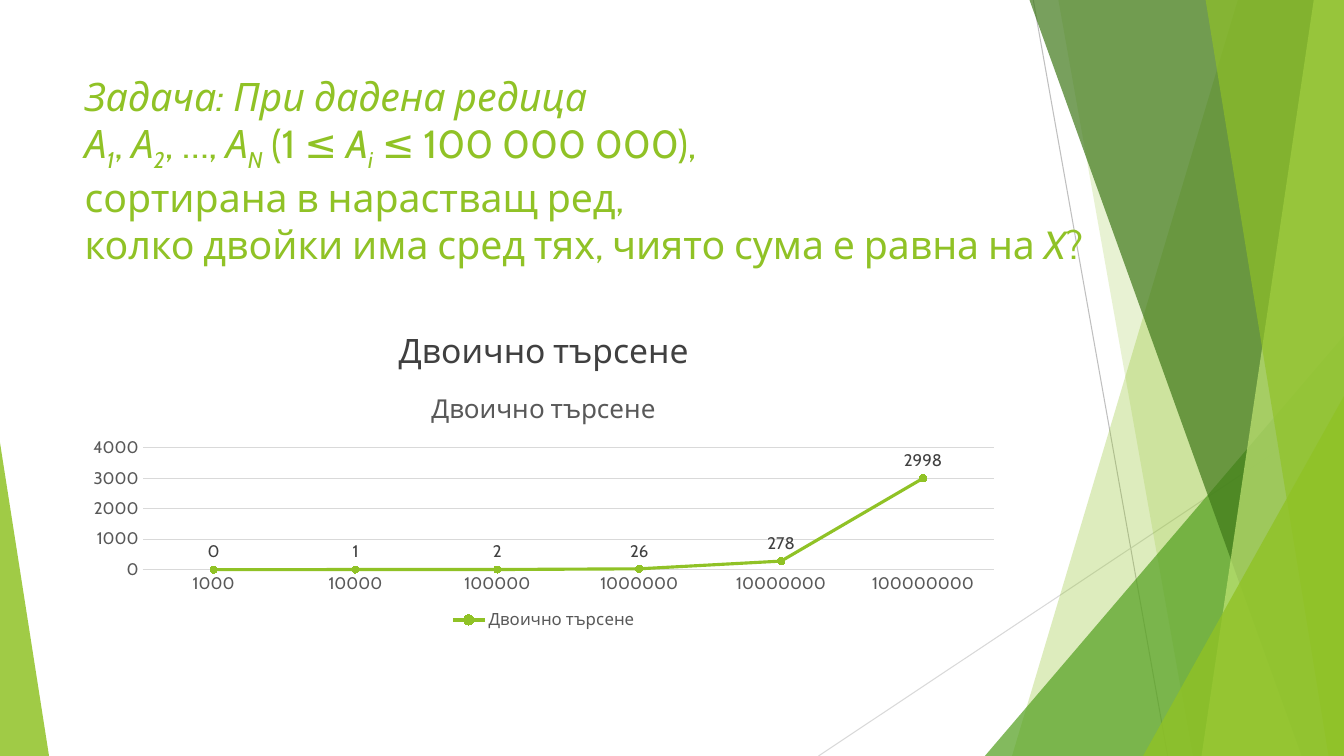
from lxml import etree
from pptx import Presentation
from pptx import util as u
from pptx.chart import data as chart_data
from pptx.dml import color
from pptx.enum import chart as charts, shapes, text
from pptx.oxml import ns

COLORS = {
    "lime": "90C226", "green": "54A021", "forest": "3F7819", "pale": "C0E474",
    "ink": "404040", "grey": "595959", "rule": "BFBFBF", "grid": "D9D9D9",
}
METHOD = "Двоично търсене"
TIMES = {"1000": 0, "10000": 1, "100000": 2, "1000000": 26, "10000000": 278, "100000000": 2998}

# Title lines as (text, style) spans: i = italic, s = italic subscript
TASK = [
    [("Задача: При дадена редица ", "i")],
    [("А", "i"), ("1", "s"), (",", ""), (" А", "i"), ("2", "s"), (", …, ", ""), ("А", "i"),
     ("N", "s"), (" (1 ≤ ", ""), ("A", "i"), ("i", "s"), (" ≤ 100 000 000), ", "")],
    [("сортирана в нарастващ ред, ", "")],
    [("колко двойки има сред тях, чиято сума е равна на ", ""), ("X", "i"), ("?", "")],
]


class Page:
    """Draws on one slide; all lengths are percent of its width or height."""

    def __init__(self, deck, font="Cabin"):
        self.width, self.height, self.font = deck.slide_width, deck.slide_height, font
        self.slide = deck.slides.add_slide(deck.slide_layouts[5])
        self.shapes = self.slide.shapes

    def spot(self, x, y):
        return round(self.width * x / 100), round(self.height * y / 100)

    def area(self, x, y, w, h):
        return self.spot(x, y) + self.spot(w, h)

    def rgb(self, name):
        return color.RGBColor.from_string(COLORS[name])

    def style(self, font, size, tint, **extra):
        values = {"name": self.font, "size": u.Pt(size), "bold": False, **extra}
        for key, value in values.items():
            setattr(font, key, value)
        font.color.rgb = self.rgb(tint)

    def stroke(self, line, tint, width):
        line.color.rgb = self.rgb(tint)
        line.width = u.Pt(width)

    def paint(self, shape, tint, opacity):
        shape.shadow.inherit = False
        shape.fill.solid()
        shape.fill.fore_color.rgb = self.rgb(tint)
        shape.line.fill.background()
        fill = shape.element.spPr.find(".//" + ns.qn("a:srgbClr"))
        etree.SubElement(fill, ns.qn("a:alpha")).set("val", str(opacity * 1000))

    def line(self, start, end, tint):
        rule = self.shapes.add_connector(
            shapes.MSO_CONNECTOR.STRAIGHT, *self.spot(*start), *self.spot(*end))
        self.stroke(rule.line, tint, 0.75)
        etree.SubElement(rule.element.spPr, ns.qn("a:effectLst"))

    def band(self, top, bottom, tint, opacity):
        """Slanted band reaching from a top and a bottom point to the right edge."""
        outline = self.shapes.build_freeform(*self.spot(top, 0))
        corners = [(100, 0), (100, 100), (bottom, 100)]
        outline.add_line_segments([self.spot(*corner) for corner in corners])
        self.paint(outline.convert_to_shape(), tint, opacity)

    def wedge(self, left, top, width, apex, tint, opacity):
        """Triangle standing on the bottom edge."""
        shape = self.shapes.add_shape(shapes.MSO_SHAPE.ISOSCELES_TRIANGLE,
                                      *self.area(left, top, width, 100 - top))
        shape.adjustments[0] = apex
        self.paint(shape, tint, opacity)

    def place(self, shape, area):
        for key, value in zip(("left", "top", "width", "height"), self.area(*area)):
            setattr(shape, key, value)

    def frame(self, box, anchor):
        values = {"word_wrap": True, "auto_size": text.MSO_AUTO_SIZE.NONE,
                  "vertical_anchor": anchor}
        for key, value in values.items():
            setattr(box.text_frame, key, value)
        return box.text_frame.paragraphs[0]

    def title(self, area, lines, size):
        box = self.shapes.title
        self.place(box, area)
        box.element.getparent().append(box.element)  # in front of the bands
        para = self.frame(box, text.MSO_ANCHOR.TOP)
        para.alignment = text.PP_ALIGN.LEFT
        for number, spans in enumerate(lines):
            if number:
                para.add_line_break()
            for words, kind in spans:
                span = para.add_run()
                span.text = words
                self.style(span.font, size, "lime", italic=kind != "")
                if kind == "s":
                    span._r.get_or_add_rPr().set("baseline", "-25000")

    def caption(self, area, words, size):
        box = self.shapes.add_textbox(*self.area(*area))
        para = self.frame(box, text.MSO_ANCHOR.BOTTOM)
        para.alignment = text.PP_ALIGN.CENTER
        para.space_before = u.Pt(10)
        span = para.add_run()
        span.text = words
        self.style(span.font, size, "ink")

    def chart(self, area, name, points):
        data = chart_data.CategoryChartData()
        data.categories = list(points)
        data.add_series(name, list(points.values()))
        chart = self.shapes.add_chart(
            charts.XL_CHART_TYPE.LINE_MARKERS, *self.area(*area), data).chart
        self.style(chart.font, 10, "ink")

        # Title and legend
        chart.has_title = True
        span = chart.chart_title.text_frame.paragraphs[0].add_run()
        span.text = name
        self.style(span.font, 18.6, "grey")
        chart.chart_title.include_in_layout = False
        chart.has_legend = True
        chart.legend.position = charts.XL_LEGEND_POSITION.BOTTOM
        chart.legend.include_in_layout = False
        self.style(chart.legend.font, 12, "grey")

        # Axes
        for axis in (chart.category_axis, chart.value_axis):
            axis.major_tick_mark = axis.minor_tick_mark = charts.XL_TICK_MARK.NONE
            self.style(axis.tick_labels.font, 12, "grey")
        self.stroke(chart.category_axis.format.line, "grid", 0.75)
        chart.value_axis.format.line.fill.background()
        self.stroke(chart.value_axis.major_gridlines.format.line, "grid", 0.75)

        # Series and its labels
        plot = chart.plots[0]
        plot.vary_by_categories = False
        series = plot.series[0]
        series.smooth = False
        self.stroke(series.format.line, "lime", 2.25)
        series.marker.style = charts.XL_MARKER_STYLE.CIRCLE
        series.marker.size = 5
        series.marker.format.fill.solid()
        series.marker.format.fill.fore_color.rgb = self.rgb("lime")
        self.stroke(series.marker.format.line, "lime", 0.75)
        labels = series.data_labels
        labels.show_value = True
        labels.position = charts.XL_LABEL_POSITION.ABOVE
        self.style(labels.font, 12, "ink")


def main():
    deck = Presentation()
    deck.slide_width, deck.slide_height = u.Inches(13.33), u.Inches(7.5)
    page = Page(deck)

    # Decoration, back to front
    page.line((76.88, 0), (86.88, 100), "rule")
    page.line((100, 53.73), (60.9, 100), "grid")
    page.band(92.1, 75.3, "lime", 30)
    page.band(78.75, 88.75, "lime", 20)
    page.wedge(73.28, 44.4, 26.72, 1, "green", 72)
    page.band(76.6, 96.85, "forest", 70)
    page.band(97.75, 89.4, "pale", 70)
    page.band(89.7, 98.85, "lime", 65)
    page.wedge(85.05, 52.4, 14.95, 1, "lime", 80)
    page.wedge(0, 58.53, 3.65, 0, "lime", 85)

    # Content
    left = 5.55
    page.title((left, 8.93, 76.2, 27.6), TASK, 28)
    page.caption((left, 41.2, 69.8, 8.4), METHOD, 24)
    page.chart((left, 49.6, 69.8, 34.27), METHOD, TIMES)
    deck.save("out.pptx")


if __name__ == "__main__":
    main()
